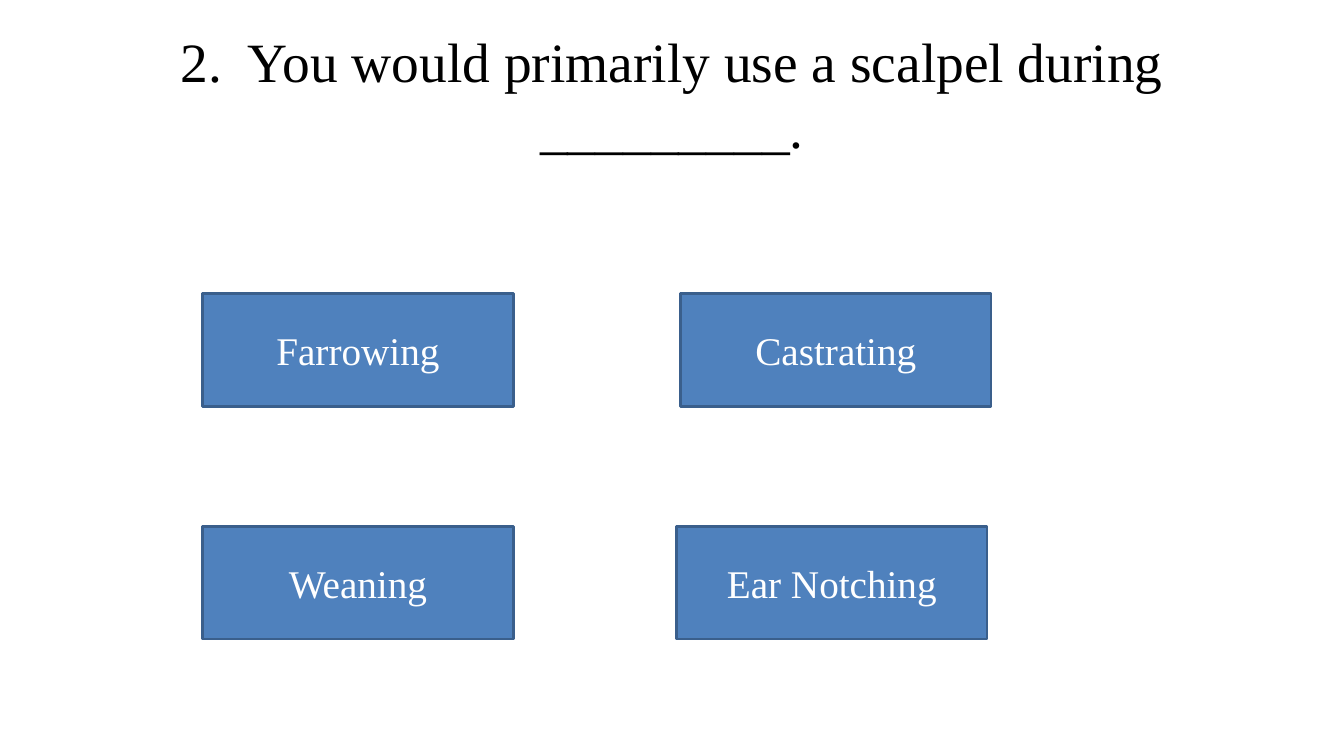
import pptx
import pptx.dml.color
import pptx.enum.shapes
import pptx.enum.text
import pptx.util
from dataclasses import dataclass


@dataclass(frozen=True)
class Theme:
    font: str = "Times New Roman"
    ink: str = "000000"
    paper: str = "FFFFFF"
    answer_fill: str = "4F81BD"
    answer_line: str = "3A5F8C"
    question_size: float = 39.6
    answer_size: float = 28
    line_width: float = 2


def color(code):
    return pptx.dml.color.RGBColor.from_string(code)


class QuizPage:
    """Places elements by percentages of the slide's width and height."""

    def __init__(self, deck, theme):
        self.deck = deck
        self.theme = theme
        self.page = deck.slides.add_slide(deck.slide_layouts[6])
        self.page.background.fill.solid()
        self.page.background.fill.fore_color.rgb = color(theme.paper)

    def area(self, left, top, width, height):
        across, down = self.deck.slide_width, self.deck.slide_height
        return [round(share * length / 100) for share, length in
                ((left, across), (top, down), (width, across), (height, down))]

    def add_text(self, box, text, size, ink):
        frame = box.text_frame
        frame.word_wrap = True
        frame.vertical_anchor = pptx.enum.text.MSO_ANCHOR.MIDDLE
        para = frame.paragraphs[0]
        para.alignment = pptx.enum.text.PP_ALIGN.CENTER
        span = para.add_run()
        span.text = text
        span.font.name = self.theme.font
        span.font.size = pptx.util.Pt(size)
        span.font.color.rgb = color(ink)

    def question(self, text, *place):
        box = self.page.shapes.add_textbox(*self.area(*place))
        self.add_text(box, text, self.theme.question_size, self.theme.ink)

    def answer(self, text, *place):
        box = self.page.shapes.add_shape(
            pptx.enum.shapes.MSO_SHAPE.RECTANGLE, *self.area(*place))
        box.shadow.inherit = False
        box.fill.solid()
        box.fill.fore_color.rgb = color(self.theme.answer_fill)
        box.line.color.rgb = color(self.theme.answer_line)
        box.line.width = pptx.util.Pt(self.theme.line_width)
        self.add_text(box, text, self.theme.answer_size, self.theme.paper)


def main():
    deck = pptx.Presentation()
    deck.slide_width = pptx.util.Inches(13.33)
    deck.slide_height = pptx.util.Inches(7.5)
    quiz = QuizPage(deck, Theme())

    # Question
    quiz.question("2.  You would primarily use a scalpel during _________.",
                  5, 4, 90, 16.67)

    # Answers: two rows, the lower right one set slightly further left
    answer_width, answer_height = 23.1, 14.93
    rows = (
        (38.8, ((15.08, "Farrowing"), (50.64, "Castrating"))),
        (69.6, ((15.08, "Weaning"), (50.34, "Ear Notching"))),
    )
    for top, answers in rows:
        for left, text in answers:
            quiz.answer(text, left, top, answer_width, answer_height)

    deck.save("out.pptx")


if __name__ == "__main__":
    main()
